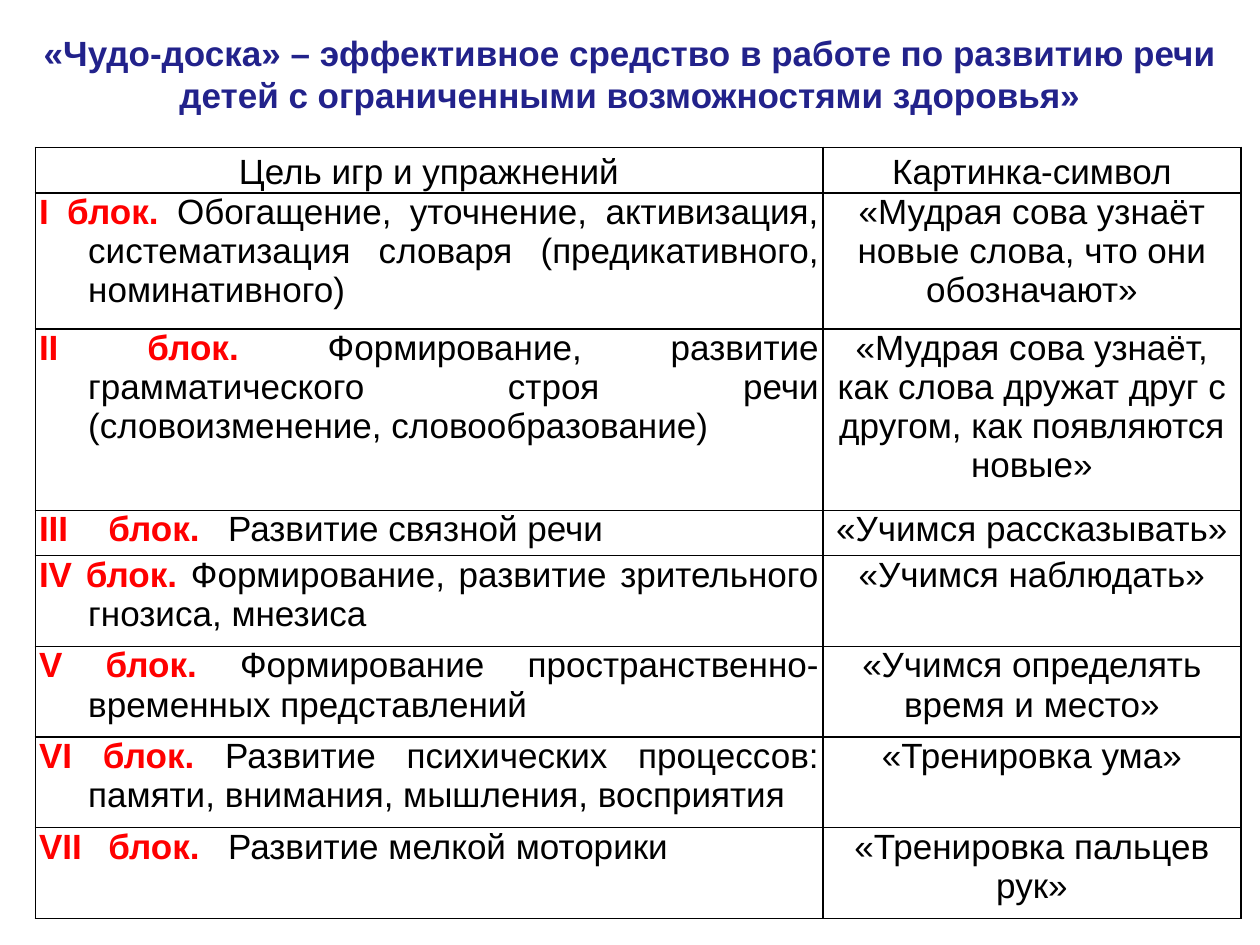
import pptx
import pptx.dml.color
import pptx.enum.text
import pptx.oxml.ns
import pptx.util
from lxml import etree

Inches = pptx.util.Inches
Align = pptx.enum.text.PP_ALIGN
ROW_UNIT = 0.36
HANGING = 0.39
TAB_STOPS = (0.55, 1.5)

# height in row units, block label, goal, symbol
BLOCKS = [
    (3, "I блок. ", "Обогащение, уточнение, активизация, систематизация словаря (предикативного, номинативного)",
     "«Мудрая сова узнаёт новые слова, что они обозначают»"),
    (4, "II блок. ", "Формирование, развитие грамматического строя речи (словоизменение, словообразование)",
     "«Мудрая сова узнаёт, как слова дружат друг с другом, как появляются новые»"),
    (1, "III\tблок.\t", "Развитие связной речи", "«Учимся рассказывать»"),
    (2, "IV блок. ", "Формирование, развитие зрительного гнозиса, мнезиса", "«Учимся наблюдать»"),
    (2, "V блок. ", "Формирование пространственно-временных представлений",
     "«Учимся определять время и место»"),
    (2, "VI блок. ", "Развитие психических процессов: памяти, внимания, мышления, восприятия",
     "«Тренировка ума»"),
    (2, "VII\tблок.\t", "Развитие мелкой моторики", "«Тренировка пальцев рук»"),
]


def write(para, text, color="000000", bold=False, align=Align.CENTER, spacing=1.0):
    para.alignment = align
    para.line_spacing = spacing
    span = para.add_run()
    span.text = text
    span.font.name = "Arial"
    span.font.size = pptx.util.Pt(20)
    span.font.bold = bold
    span.font.color.rgb = pptx.dml.color.RGBColor.from_string(color)


def add_xml(parent, tag, **attributes):
    return etree.SubElement(parent, pptx.oxml.ns.qn(tag), **attributes)


deck = pptx.Presentation()
deck.slide_width, deck.slide_height = Inches(10), Inches(7.5)
page = deck.slides.add_slide(deck.slide_layouts[5])

title = page.shapes.title
title.left, title.top, title.width, title.height = 0, 0, deck.slide_width, Inches(1.17)
title.text_frame.auto_size = pptx.enum.text.MSO_AUTO_SIZE.NONE
title.text_frame.vertical_anchor = pptx.enum.text.MSO_ANCHOR.MIDDLE
write(title.text_frame.paragraphs[0],
      "«Чудо-доска» – эффективное средство в работе по развитию речи "
      "детей с ограниченными возможностями здоровья»", color="22228B", bold=True)

heights = [1] + [block[0] for block in BLOCKS]
table = page.shapes.add_table(len(heights), 2, Inches(0.28), Inches(1.17),
                              Inches(9.57), Inches(ROW_UNIT * sum(heights))).table
table.first_row = table.horz_banding = False
for column, width in zip(table.columns, (6.25, 3.32)):
    column.width = Inches(width)
for row, height in zip(table.rows, heights):
    row.height = Inches(ROW_UNIT * height)

for cell in table.iter_cells():
    cell.margin_left = cell.margin_right = Inches(0.03)
    cell.margin_top = cell.margin_bottom = 0
    properties = cell._tc.get_or_add_tcPr()
    for side in "LRTB":
        border = add_xml(properties, f"a:ln{side}", w=str(pptx.util.Pt(1)))
        add_xml(add_xml(border, "a:solidFill"), "a:srgbClr", val="000000")
    cell.fill.solid()
    cell.fill.fore_color.rgb = pptx.dml.color.RGBColor.from_string("FFFFFF")

for column, heading in enumerate(("Цель игр и упражнений", "Картинка-символ")):
    write(table.cell(0, column).text_frame.paragraphs[0], heading, spacing=1.15)

for row, (height, label, goal, symbol) in enumerate(BLOCKS, start=1):
    para = table.cell(row, 0).text_frame.paragraphs[0]
    write(para, label, color="FF0000", bold=True, align=Align.JUSTIFY)
    write(para, goal, align=Align.JUSTIFY)
    properties = para._p.get_or_add_pPr()
    if "\t" in label:
        stops = add_xml(properties, "a:tabLst")
        for stop in TAB_STOPS:
            add_xml(stops, "a:tab", pos=str(Inches(stop)), algn="l")
    else:
        properties.set("marL", str(Inches(HANGING)))
        properties.set("indent", str(-Inches(HANGING)))
    write(table.cell(row, 1).text_frame.paragraphs[0], symbol)

deck.save("out.pptx")
